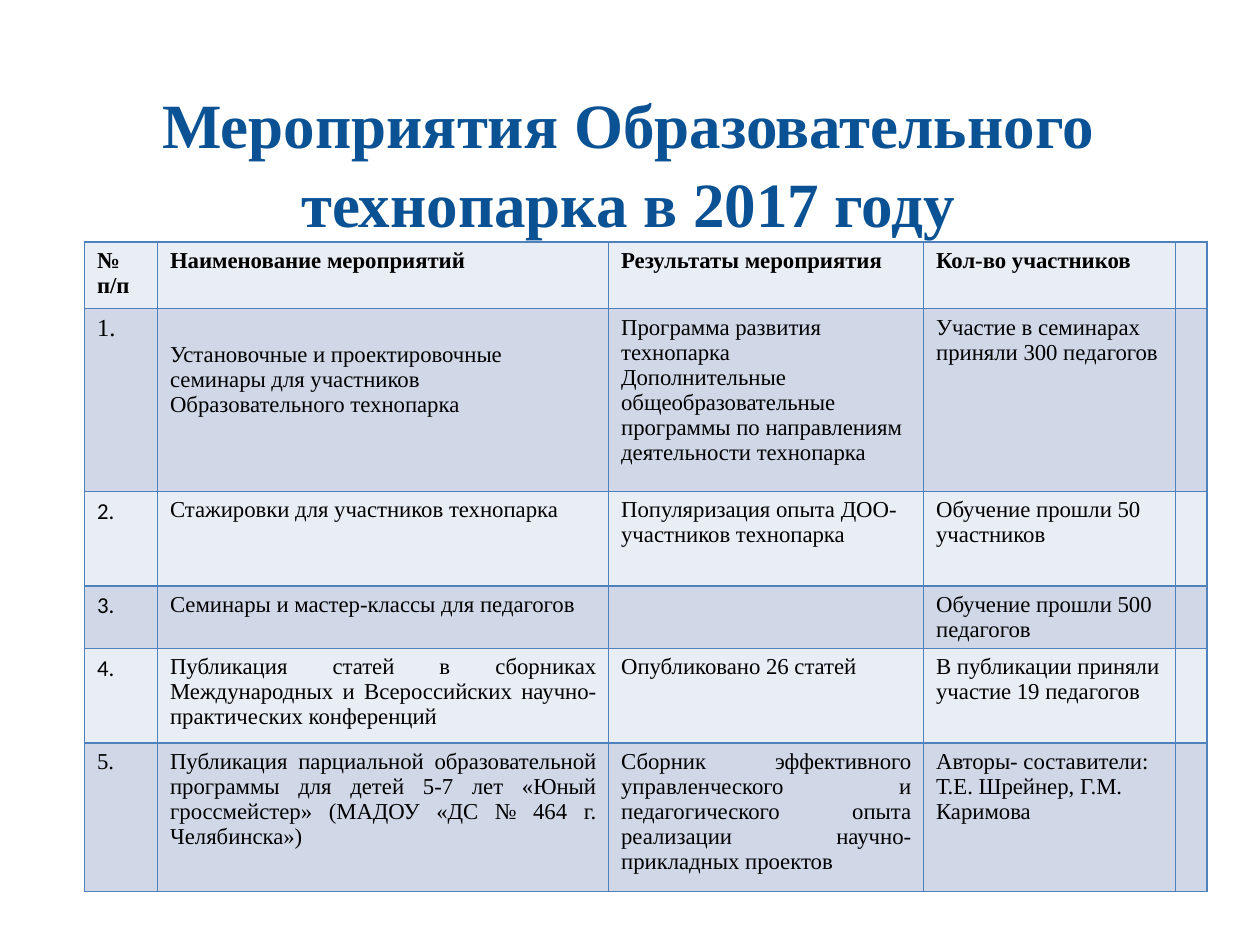
from dataclasses import dataclass

from lxml.etree import SubElement
from pptx import Presentation
from pptx.dml.color import RGBColor
from pptx.enum.text import MSO_ANCHOR, PP_ALIGN
from pptx.oxml.ns import qn
from pptx.util import Inches, Pt

COLORS = {
    "title": "0A5294",
    "text": "000000",
    "border": "4F81BD",
    "light_row": "E9EDF4",
    "dark_row": "D0D8E8",
}
SERIF = "Times New Roman"
SANS = "Calibri"
COLUMN_WIDTHS = [0.58, 3.58, 2.5, 2, 0.25]
ROW_HEIGHTS = [0.53, 1.45, 0.75, 0.47, 0.75, 1.18]


@dataclass
class Entry:
    text: str = ""
    size: int = 13
    font: str = SERIF
    bold: bool = False
    justified: bool = False
    top: float = 0.05


EVENTS = [
    [
        Entry("№ п/п", bold=True),
        Entry("Наименование мероприятий", bold=True),
        Entry("Результаты мероприятия", bold=True),
        Entry("Кол-во участников", bold=True),
        Entry(),
    ],
    [
        Entry("1.", size=14),
        Entry(
            "Установочные и проектировочные семинары для участников "
            "Образовательного технопарка",
            top=0.27,
        ),
        Entry(
            "Программа развития технопарка\n"
            "Дополнительные общеобразовательные программы по направлениям "
            "деятельности технопарка"
        ),
        Entry("Участие в семинарах приняли 300 педагогов"),
        Entry(),
    ],
    [
        Entry("2.", font=SANS),
        Entry("Стажировки для участников технопарка"),
        Entry("Популяризация опыта ДОО- участников технопарка"),
        Entry("Обучение прошли 50 участников"),
        Entry(),
    ],
    [
        Entry("3.", font=SANS),
        Entry("Семинары и мастер-классы для педагогов"),
        Entry(),
        Entry("Обучение прошли 500 педагогов"),
        Entry(),
    ],
    [
        Entry("4.", font=SANS),
        Entry(
            "Публикация статей в сборниках Международных и Всероссийских "
            "научно-практических конференций",
            justified=True,
        ),
        Entry("Опубликовано 26 статей"),
        Entry("В публикации приняли участие 19 педагогов"),
        Entry(),
    ],
    [
        Entry("5."),
        Entry(
            "Публикация парциальной образовательной программы для детей 5-7 лет "
            "«Юный гроссмейстер» (МАДОУ «ДС № 464 г. Челябинска»)",
            justified=True,
        ),
        Entry(
            "Сборник эффективного управленческого и педагогического опыта "
            "реализации научно-прикладных проектов",
            justified=True,
        ),
        Entry("Авторы- составители: Т.Е. Шрейнер, Г.М. Каримова"),
        Entry(),
    ],
]


def format_font(font, name: str, size: int, bold: bool, color: str) -> None:
    font.name = name
    font.size = Pt(size)
    font.bold = bold
    font.color.rgb = RGBColor.from_string(COLORS[color])


def add_borders(cell) -> None:
    properties = cell._tc.get_or_add_tcPr()
    for index, side in enumerate(("lnL", "lnR", "lnT", "lnB")):
        line = properties.makeelement(qn(f"a:{side}"), {"w": str(Pt(1))})
        fill = SubElement(line, qn("a:solidFill"))
        SubElement(fill, qn("a:srgbClr"), val=COLORS["border"])
        properties.insert(index, line)


def fill_cell(cell, entry: Entry, fill: str) -> None:
    cell.fill.solid()
    cell.fill.fore_color.rgb = RGBColor.from_string(COLORS[fill])
    add_borders(cell)
    cell.margin_left = cell.margin_right = Inches(0.1)
    cell.margin_top = Inches(entry.top)
    cell.margin_bottom = Inches(0.05)
    cell.text_frame.text = entry.text
    for paragraph in cell.text_frame.paragraphs:
        paragraph.alignment = PP_ALIGN.JUSTIFY if entry.justified else PP_ALIGN.LEFT
        format_font(paragraph.font, entry.font, entry.size, entry.bold, "text")
        for run in paragraph.runs:
            format_font(run.font, entry.font, entry.size, entry.bold, "text")


def add_title(slide) -> None:
    title = slide.shapes.title
    title.left, title.top = Inches(0.25), Inches(0.67)
    title.width, title.height = Inches(9.47), Inches(1.21)
    frame = title.text_frame
    frame.text = "Мероприятия Образовательного технопарка в 2017 году"
    frame.word_wrap = True
    frame.vertical_anchor = MSO_ANCHOR.MIDDLE
    frame.margin_left = frame.margin_right = 0
    frame.margin_top = frame.margin_bottom = 0
    heading = frame.paragraphs[0]
    heading.alignment = PP_ALIGN.CENTER
    heading.line_spacing = 1.05
    format_font(heading.runs[0].font, SERIF, 36, True, "title")


def add_events(slide) -> None:
    events = slide.shapes.add_table(
        len(ROW_HEIGHTS), len(COLUMN_WIDTHS),
        Inches(0.67), Inches(1.92),
        Inches(sum(COLUMN_WIDTHS)), Inches(sum(ROW_HEIGHTS)),
    ).table
    for column, width in zip(events.columns, COLUMN_WIDTHS):
        column.width = Inches(width)
    for index, (row, height) in enumerate(zip(events.rows, ROW_HEIGHTS)):
        row.height = Inches(height)
        fill = "dark_row" if index % 2 else "light_row"
        for cell, entry in zip(row.cells, EVENTS[index]):
            fill_cell(cell, entry, fill)


def main() -> None:
    presentation = Presentation()
    presentation.slide_width = Inches(10)
    presentation.slide_height = Inches(7.5)
    slide = presentation.slides.add_slide(presentation.slide_layouts[5])
    add_title(slide)
    add_events(slide)
    presentation.save("out.pptx")


if __name__ == "__main__":
    main()
